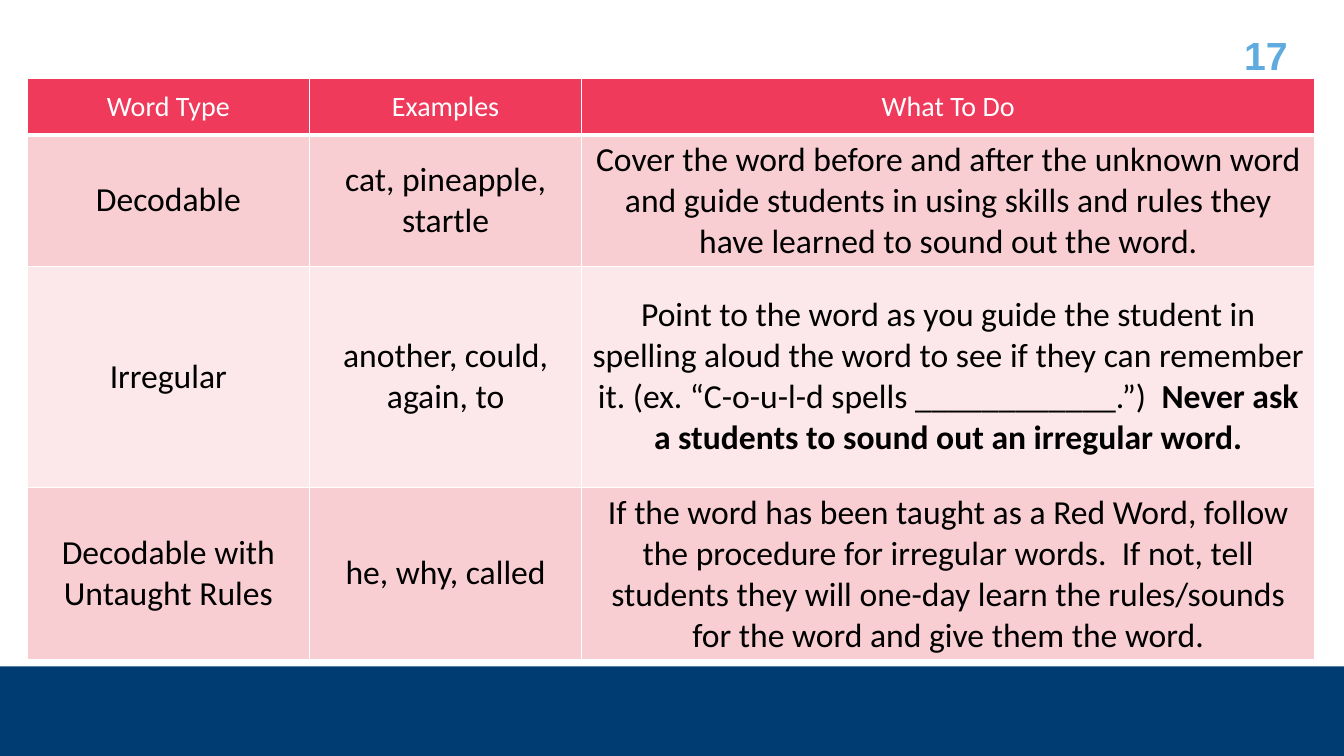
from dataclasses import dataclass

from lxml import etree
from pptx import Presentation
from pptx import util as u
from pptx.dml.color import RGBColor
from pptx.enum import shapes, text
from pptx.oxml import ns

EMU_PER_PX = 9144  # 100 px to the inch

WHITE, BLACK = "FFFFFF", "000000"
NAVY, SKY = "003B71", "5FAADE"
HEADER_RED, ROSE, PALE_ROSE = "EF3A5B", "F9CED2", "FCE8EA"

COLUMN_WIDTHS = [280, 270, 727]
ROW_HEIGHTS = [56, 124, 220, 160]


@dataclass(frozen=True)
class Style:
    size: int
    color: str
    font: str = "Calibri"


@dataclass(frozen=True)
class Run:
    words: str
    bold: bool = False


@dataclass(frozen=True)
class WordRow:
    cells: list[list[Run]]
    fill: str
    style: Style
    bottom_border: int = 1


HEADER = Style(20, WHITE)
BODY = Style(24, BLACK)
PAGE_NUMBER = Style(28, SKY, "Arial")

ROWS = [
    WordRow([[Run("Word Type")], [Run("Examples")], [Run("What To Do")]],
            HEADER_RED, HEADER, bottom_border=3),
    WordRow([
        [Run("Decodable")],
        [Run("cat, pineapple, startle")],
        [Run("Cover the word before and after the unknown word and guide students in "
             "using skills and rules they have learned to sound out the word.")],
    ], ROSE, BODY),
    WordRow([
        [Run("Irregular")],
        [Run("another, could, again, to")],
        [Run("Point to the word as you guide the student in spelling aloud the word to "
             "see if they can remember it. (ex. “C-o-u-l-d spells ____________.”)  "),
         Run("Never ask a students to sound out an irregular word.", bold=True)],
    ], PALE_ROSE, BODY),
    WordRow([
        [Run("Decodable with Untaught Rules")],
        [Run("he, why, called")],
        [Run("If the word has been taught as a Red Word, follow the procedure for "
             "irregular words.  If not, tell students they will one-day learn the "
             "rules/sounds for the word and give them the word.")],
    ], ROSE, BODY),
]


def px(length: int) -> u.Emu:
    return u.Emu(length * EMU_PER_PX)


def rgb(color: str) -> RGBColor:
    return RGBColor.from_string(color)


def write(frame, runs: list[Run], style: Style, align) -> None:
    paragraph = frame.paragraphs[0]
    paragraph.alignment = align
    for item in runs:
        run = paragraph.add_run()
        run.text = item.words
        run.font.name = style.font
        run.font.size = u.Pt(style.size)
        run.font.bold = item.bold
        run.font.color.rgb = rgb(style.color)


def set_borders(cell, bottom: int) -> None:
    properties = cell._tc.get_or_add_tcPr()
    widths = {"lnL": 1, "lnR": 1, "lnT": 1, "lnB": bottom}
    for position, (side, width) in enumerate(widths.items()):
        line = etree.Element(ns.qn(f"a:{side}"), w=str(u.Pt(width)))
        fill = etree.SubElement(line, ns.qn("a:solidFill"))
        etree.SubElement(fill, ns.qn("a:srgbClr"), val=WHITE)
        properties.insert(position, line)


def add_footer_bar(slide) -> None:
    bar = slide.shapes.add_shape(shapes.MSO_SHAPE.RECTANGLE,
                                 px(-1), px(661), px(1334), px(95))
    bar.shadow.inherit = False
    bar.fill.solid()
    bar.fill.fore_color.rgb = rgb(NAVY)
    bar.line.fill.background()


def add_page_number(slide) -> None:
    frame = slide.shapes.add_textbox(px(1207), px(33), px(80), px(42)).text_frame
    frame.word_wrap = True
    frame.vertical_anchor = text.MSO_ANCHOR.MIDDLE
    write(frame, [Run("17", bold=True)], PAGE_NUMBER, text.PP_ALIGN.RIGHT)


def add_word_table(slide) -> None:
    table = slide.shapes.add_table(
        len(ROWS), len(COLUMN_WIDTHS), px(27), px(78),
        px(sum(COLUMN_WIDTHS)), px(sum(ROW_HEIGHTS))).table
    for column, width in zip(table.columns, COLUMN_WIDTHS):
        column.width = px(width)
    for table_row, height, row in zip(table.rows, ROW_HEIGHTS, ROWS):
        table_row.height = px(height)
        for cell, runs in zip(table_row.cells, row.cells):
            cell.vertical_anchor = text.MSO_ANCHOR.MIDDLE
            cell.fill.solid()
            cell.fill.fore_color.rgb = rgb(row.fill)
            set_borders(cell, row.bottom_border)
            write(cell.text_frame, runs, row.style, text.PP_ALIGN.CENTER)


def main() -> None:
    presentation = Presentation()
    presentation.slide_width, presentation.slide_height = px(1333), px(750)
    slide = presentation.slides.add_slide(presentation.slide_layouts[6])
    add_footer_bar(slide)
    add_page_number(slide)
    add_word_table(slide)
    presentation.save("out.pptx")


if __name__ == "__main__":
    main()
